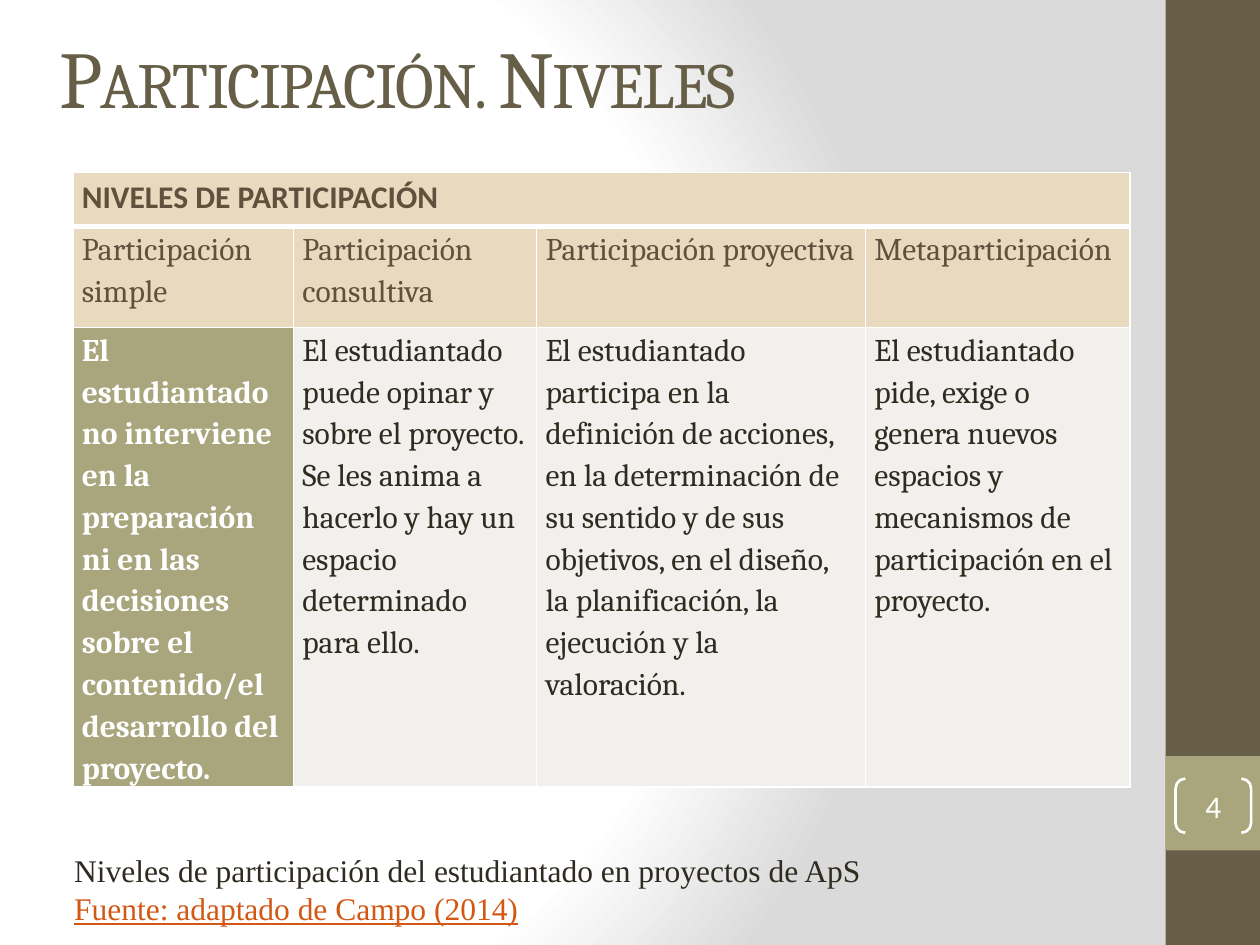
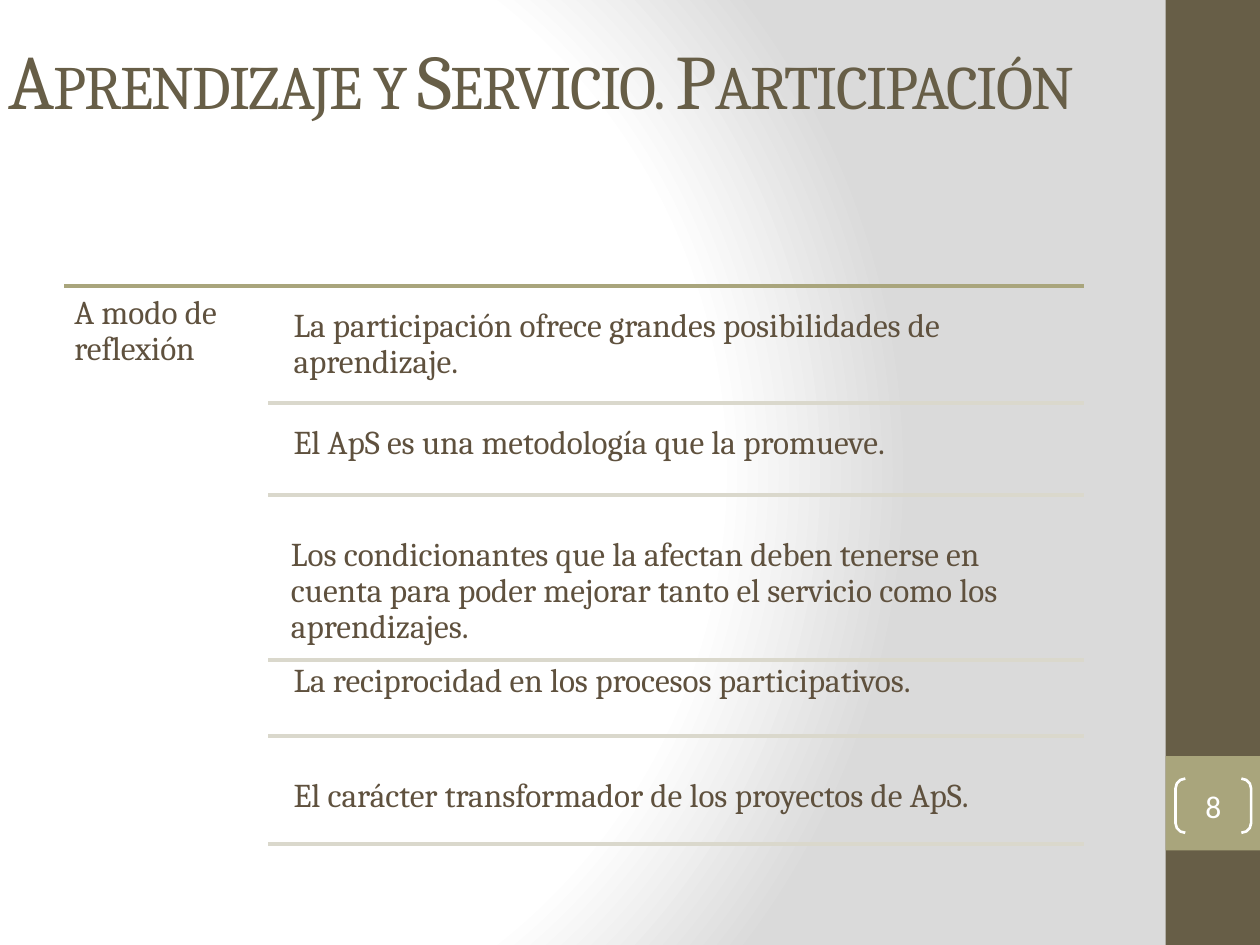
from dataclasses import dataclass

from pptx import Presentation
from pptx.dml.color import RGBColor as Rgb
from pptx.enum.shapes import MSO_CONNECTOR as Link, MSO_SHAPE as Kind
from pptx.enum.text import MSO_ANCHOR as Anchor, MSO_AUTO_SIZE as Fit, PP_ALIGN as Align
from pptx.oxml import parse_xml
from pptx.oxml.ns import nsdecls
from pptx.util import Inches, Pt


@dataclass(frozen=True)
class Theme:
    dark: str = "675E47"
    olive: str = "A9A57C"
    rule: str = "DAD8CC"
    brown: str = "5F513E"
    ink: str = "2F2B20"
    sand: str = "E9D9BE"
    pale: str = "F1F0EC"
    white: str = "FFFFFF"
    shade: str = "DADADA"
    rust: str = "D25814"
    serif: str = "Cambria"
    sans: str = "Calibri"
    roman: str = "Times New Roman"
    text: int = 18
    point: int = 19


LOOK = Theme()


def color(code):
    return Rgb.from_string(code)


def write(frame, text, size=LOOK.text, font=LOOK.serif, ink=LOOK.ink, bold=False,
          line=False, space=None, align=Align.LEFT, more=False):
    """Write one paragraph per line of text; more=True adds to what is there."""
    for i, words in enumerate(text.split("\n")):
        para = frame.add_paragraph() if more or i else frame.paragraphs[0]
        para.alignment = align
        if space:
            para.line_spacing = space
        run = para.add_run()
        run.text = words
        face = run.font
        face.size, face.name, face.bold, face.underline = Pt(size), font, bold, line
        face.color.rgb = color(ink)


def pad(box, x, y):
    box.margin_left = box.margin_right = Inches(x)
    box.margin_top = box.margin_bottom = Inches(y)


def edge(cell, widths):
    """Draw white borders; widths are left, right, top, bottom in points."""
    props = cell._tc.get_or_add_tcPr()
    for i, (side, width) in enumerate(zip("LRTB", widths)):
        props.insert(i, parse_xml(
            f'<a:ln{side} {nsdecls("a")} w="{Pt(width)}"><a:solidFill>'
            f'<a:srgbClr val="{LOOK.white}"/></a:solidFill></a:ln{side}>'))


class Deck:
    def __init__(self, look):
        self.look = look
        self.show = Presentation()
        self.show.slide_width, self.show.slide_height = Inches(10), Inches(7.5)
        self.slide = None
        self.glow()

    def glow(self):
        """Give the master its round white-to-grey background."""
        master = self.show.slide_master
        master.background.fill.solid()
        base = master.element.xpath("./p:cSld/p:bg/p:bgPr")[0]
        stops = ((0, self.look.white), (75, self.look.white), (100, self.look.shade))
        marks = "".join(f'<a:gs pos="{at * 1000}"><a:srgbClr val="{code}"/></a:gs>'
                        for at, code in stops)
        base.replace(base[0], parse_xml(
            f'<a:gradFill {nsdecls("a")} rotWithShape="1"><a:gsLst>{marks}</a:gsLst>'
            '<a:path path="circle"><a:fillToRect l="20000" t="50000" r="100000" '
            'b="50000"/></a:path></a:gradFill>'))

    def page(self, title, number, spot, size):
        self.slide = self.show.slides.add_slide(self.show.slide_layouts[5])
        self.block(9.25, 0, 0.75, 7.5, self.look.dark)
        self.block(9.25, 6, 0.75, 0.75, self.look.olive)
        self.title(title, spot, size)
        self.badge(number)

    def title(self, text, spot, size):
        head = self.slide.shapes.title
        head.left, head.top, head.width, head.height = map(Inches, spot)
        frame = head.text_frame
        frame.auto_size, frame.vertical_anchor = Fit.NONE, Anchor.MIDDLE
        write(frame, text, size=size, ink=self.look.dark)
        props = frame.paragraphs[0].runs[0].font._element
        props.set("cap", "small")
        props.set("spc", "-100")

    def shape(self, kind, x, y, w, h):
        item = self.slide.shapes.add_shape(kind, *map(Inches, (x, y, w, h)))
        item.shadow.inherit = False
        return item

    def block(self, x, y, w, h, fill):
        item = self.shape(Kind.RECTANGLE, x, y, w, h)
        item.fill.solid()
        item.fill.fore_color.rgb = color(fill)
        item.line.fill.background()

    def badge(self, number):
        item = self.shape(Kind.DOUBLE_BRACKET, 9.33, 6.18, 0.6, 0.43)
        item.adjustments[0] = 0.18
        item.fill.background()
        item.line.color.rgb, item.line.width = color(self.look.white), Pt(1.5)
        frame = item.text_frame
        pad(frame, 0, 0)
        frame.vertical_anchor = Anchor.MIDDLE
        write(frame, str(number), font=self.look.sans, ink=self.look.white,
              align=Align.CENTER)

    def text(self, text, x, y, w, h, inset=(0.1, 0.05), anchor=Anchor.TOP, **style):
        frame = self.slide.shapes.add_textbox(*map(Inches, (x, y, w, h))).text_frame
        frame.word_wrap, frame.vertical_anchor = True, anchor
        pad(frame, *inset)
        write(frame, text, **style)
        return frame

    def point(self, text, x, y, w, h):
        self.text(text, x, y, w, h, inset=(0.08, 0.08), size=self.look.point,
                  ink=self.look.brown, space=0.9)

    def rule(self, x, y, end, ink):
        line = self.slide.shapes.add_connector(
            Link.STRAIGHT, *map(Inches, (x, y, end, y)))
        line.line.color.rgb, line.line.width = color(ink), Pt(2)
        line._element.spPr.append(parse_xml(f'<a:effectLst {nsdecls("a")}/>'))

    def table(self, rows, x, y, wide, high, style):
        """Fill a grid; style(row, col) gives the fill and the text format."""
        spot = map(Inches, (x, y, sum(wide), sum(high)))
        grid = self.slide.shapes.add_table(len(high), len(wide), *spot).table
        for col, width in zip(grid.columns, wide):
            col.width = Inches(width)
        for row, height in zip(grid.rows, high):
            row.height = Inches(height)
        grid.cell(0, 0).merge(grid.cell(0, len(wide) - 1))
        for r in range(len(high)):
            for c in range(len(wide)):
                cell = grid.cell(r, c)
                fill, form = style(r, c)
                cell.fill.solid()
                cell.fill.fore_color.rgb = color(fill)
                edge(cell, (1, 1, 3 if r == 1 else 1, 3 if r == 0 else 1))
                pad(cell, 0.07, 0)
                if c < len(rows[r]):
                    write(cell.text_frame, rows[r][c], space=1.15, **form)


def style(row, col):
    if row == 0:
        return LOOK.sand, dict(font=LOOK.sans, ink=LOOK.brown, bold=True)
    if row == 1:
        return LOOK.sand, dict(ink=LOOK.brown)
    if col == 0:
        return LOOK.olive, dict(ink=LOOK.white, bold=True)
    return LOOK.pale, {}


def levels(deck):
    deck.page("Participación. Niveles", 4, (0.37, -0.02, 8.33, 1.25), 46)
    rows = [
        ["NIVELES DE PARTICIPACIÓN"],
        ["Participación simple", "Participación consultiva",
         "Participación proyectiva", "Metaparticipación"],
        ["El estudiantado no interviene en la preparación ni en las decisiones "
         "sobre el contenido/el desarrollo del proyecto.",
         "El estudiantado puede opinar y sobre el proyecto. Se les anima a hacerlo "
         "y hay un espacio determinado para ello.",
         "El estudiantado participa en la definición de acciones, en la determinación "
         "de su sentido y de sus objetivos, en el diseño, la planificación, "
         "la ejecución y la valoración.",
         "El estudiantado pide, exige o genera nuevos\n"
         "espacios y mecanismos de participación en el proyecto."],
    ]
    deck.table(rows, 0.58, 1.37, (1.75, 1.93, 2.61, 2.1), (0.43, 0.8, 3.64), style)
    note = deck.text("Niveles de participación del estudiantado en proyectos de ApS",
                     0.49, 6.7, 8.59, 0.71, anchor=Anchor.MIDDLE, font=LOOK.roman)
    write(note, "Fuente: adaptado de Campo (2014)", font=LOOK.roman, ink=LOOK.rust,
          line=True, more=True)


def closing(deck):
    deck.page("Aprendizaje y Servicio. Participación", 8, (-0.03, 0, 9.75, 1.25), 44)
    end = 8.6
    deck.rule(0.51, 2.27, end, LOOK.olive)
    deck.point("A modo de reflexión", 0.51, 2.27, 1.62, 5.2)
    # Each point: text, left, top, height, rule below
    points = [
        ("La participación ofrece grandes posibilidades de aprendizaje.",
         2.25, 2.37, 0.83, 3.2),
        ("El ApS es una metodología que la promueve.", 2.25, 3.3, 0.6, 3.93),
        ("Los condicionantes que la afectan deben tenerse en cuenta para poder "
         "mejorar tanto el servicio como los aprendizajes.", 2.23, 4.19, 1.1, 5.24),
        ("La reciprocidad en los procesos participativos.", 2.25, 5.19, 0.61, 5.84),
        ("El carácter transformador de los proyectos de ApS.", 2.25, 6.1, 0.44, 6.7),
    ]
    for text, left, top, height, below in points:
        deck.point(text, left, top, 6.36, height)
        deck.rule(2.13, below, end, LOOK.rule)


def main():
    deck = Deck(LOOK)
    levels(deck)
    closing(deck)
    deck.show.save("out.pptx")


if __name__ == "__main__":
    main()
